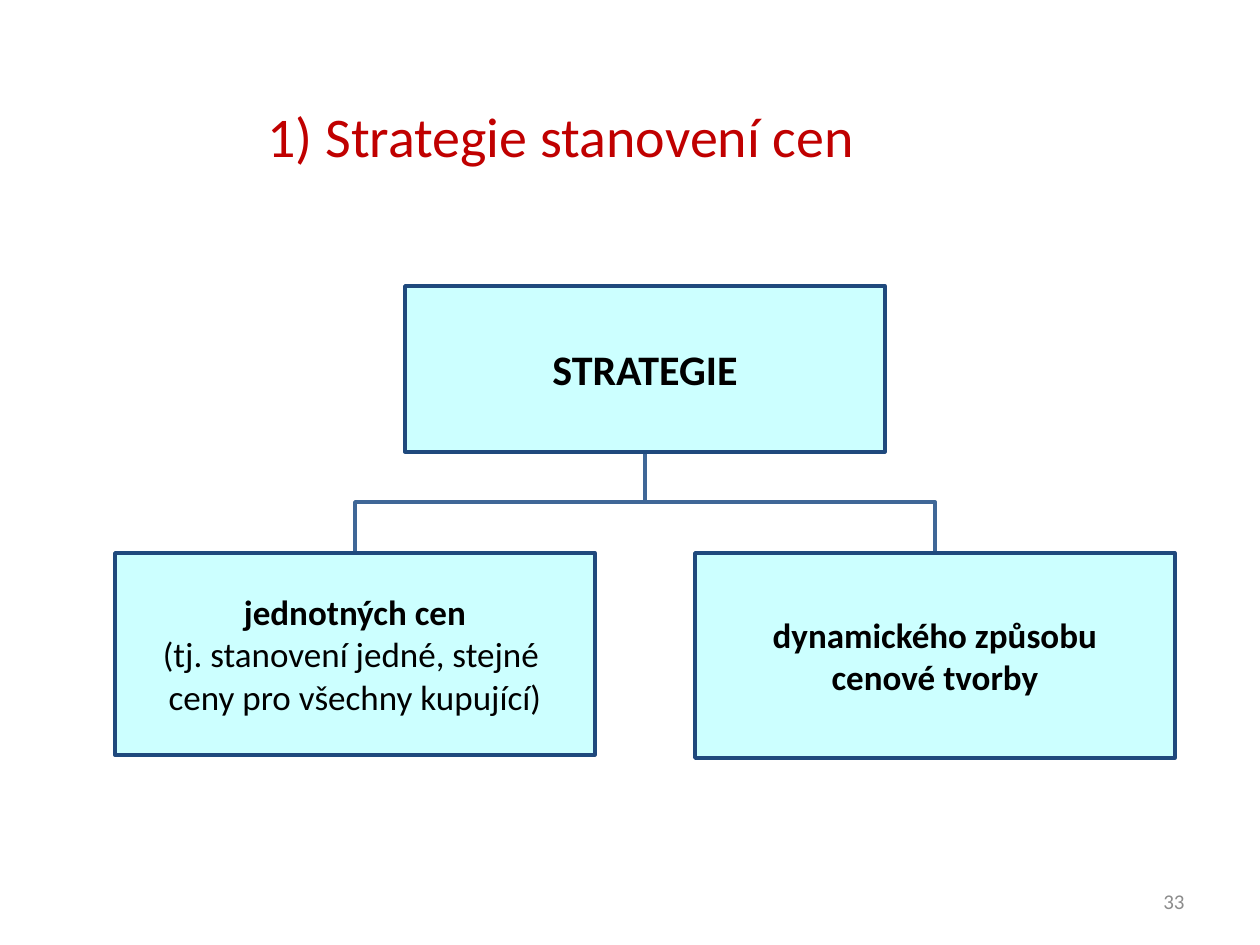
from pptx import Presentation
from pptx.dml.color import RGBColor
from pptx.enum.shapes import MSO_SHAPE as Preset
from pptx.enum.text import MSO_ANCHOR as Anchor, PP_ALIGN as Align
from pptx.util import Pt

PX = 914400 / 126


def color(hex_string):
    return RGBColor.from_string(hex_string)


def write(frame, paragraphs, size, ink, align=Align.CENTER, inset=None):
    frame.word_wrap = True
    if inset is not None:
        frame.margin_left = frame.margin_right = round(inset * PX)
        frame.margin_top = frame.margin_bottom = round(inset * PX)
    for index, (lines, bold) in enumerate(paragraphs):
        paragraph = frame.add_paragraph() if index else frame.paragraphs[0]
        paragraph.alignment = align
        for number, line in enumerate(lines):
            if number:
                paragraph.add_line_break()
            run = paragraph.add_run()
            run.text = line
            run.font.name = "Calibri"
            run.font.size = Pt(size)
            run.font.bold = bold
            run.font.color.rgb = color(ink)


deck = Presentation()
deck.slide_width, deck.slide_height = round(1260 * PX), round(945 * PX)
slide = deck.slides.add_slide(deck.slide_layouts[6])
shapes = slide.shapes

page_number = shapes.add_textbox(*[round(v * PX) for v in (903, 876, 294, 50)])
page_number.text_frame.vertical_anchor = Anchor.MIDDLE
write(page_number.text_frame, [(["33"], False)], 12, "8C8C8C", Align.RIGHT)

box_width = 480
root_left, root_top, root_height = 405, 286, 166
branch_top = 553
root_center, root_bottom = root_left + box_width // 2, root_top + root_height
bus = (root_bottom + branch_top) // 2

for branch_center in (root_center + 290, root_center - 290):
    builder = shapes.build_freeform(root_center, root_bottom, scale=PX)
    builder.add_line_segments(
        [(root_center, bus), (branch_center, bus), (branch_center, branch_top)],
        close=False,
    )
    branch_line = builder.convert_to_shape()
    branch_line.shadow.inherit = False
    branch_line.fill.background()
    branch_line.line.color.rgb = color("3F6797")
    branch_line.line.width = Pt(2)

strategies = [
    (root_left, root_top, root_height, 24, 2, [(["STRATEGIE"], True)]),
    (root_left - 290, branch_top, 202, 20, 1, [
        (["jednotných cen"], True),
        (["(tj. stanovení jedné, stejné ", "ceny pro všechny kupující)"], False),
    ]),
    (root_left + 290, branch_top, 205, 20, 1, [
        (["dynamického způsobu"], True),
        (["cenové tvorby"], True),
    ]),
]
for left, top, height, size, inset, wording in strategies:
    strategy = shapes.add_shape(
        Preset.RECTANGLE, *[round(v * PX) for v in (left, top, box_width, height)]
    )
    strategy.shadow.inherit = False
    strategy.fill.solid()
    strategy.fill.fore_color.rgb = color("CCFFFF")
    strategy.line.color.rgb = color("1F497D")
    strategy.line.width = Pt(2)
    strategy.text_frame.vertical_anchor = Anchor.MIDDLE
    write(strategy.text_frame, wording, size, "000000", inset=inset)

title = shapes.add_textbox(*[round(v * PX) for v in (65, 95, 992, 81)])
write(title.text_frame, [(["1) Strategie stanovení cen"], False)], 32, "C00000")

deck.save("out.pptx")
